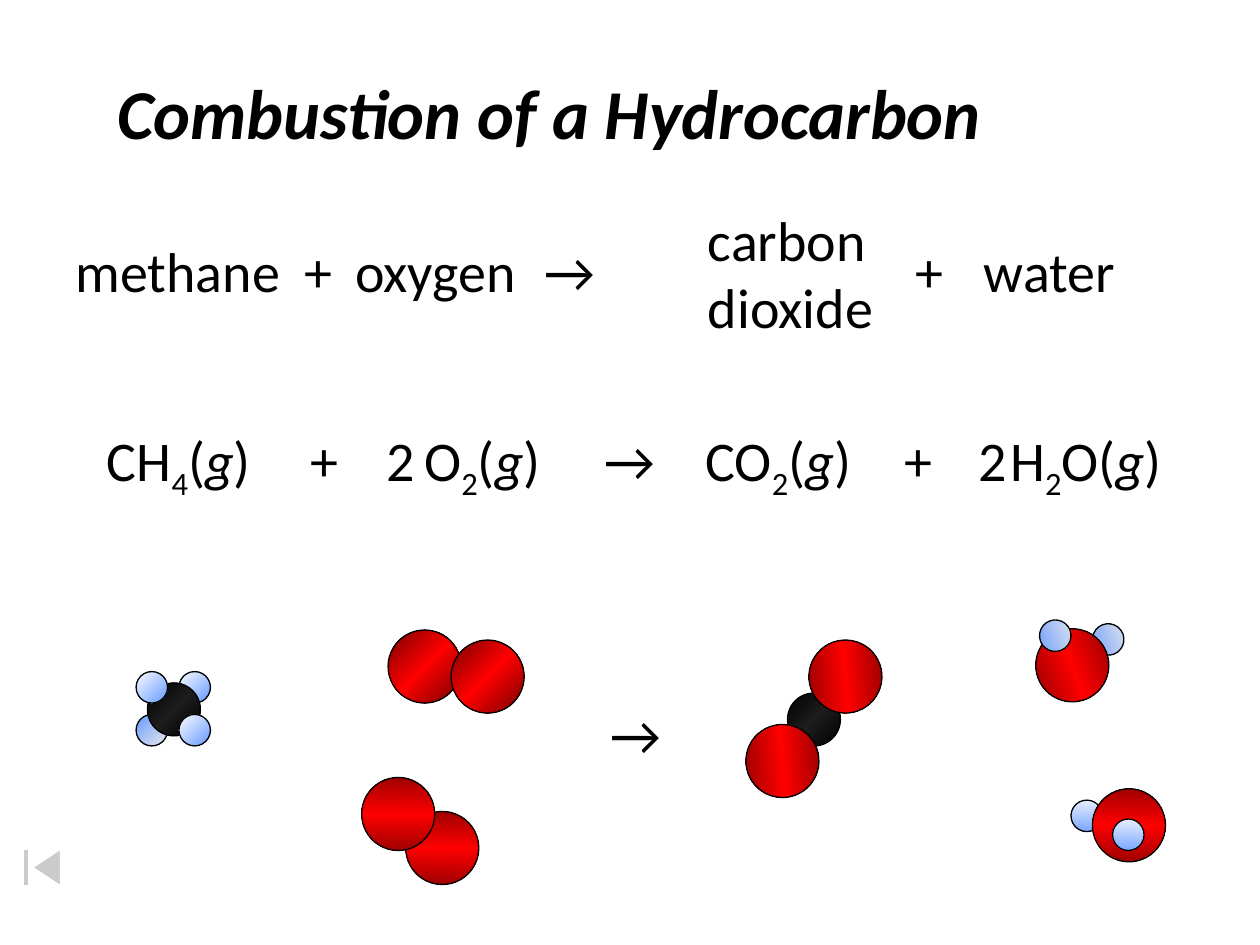
import lxml.etree
import pptx
import pptx.dml.color
import pptx.enum.dml
import pptx.enum.shapes
import pptx.enum.text
import pptx.oxml
import pptx.oxml.ns
import pptx.util

RGBColor = pptx.dml.color.RGBColor
MSO_SHAPE = pptx.enum.shapes.MSO_SHAPE
qn = pptx.oxml.ns.qn

PX = 9144  # 100 px to the inch
FONT = "Calibri"
BLACK = RGBColor(0x00, 0x00, 0x00)
CHARCOAL = RGBColor(0x1C, 0x1C, 0x1C)
RED = RGBColor(0xFF, 0x00, 0x00)
DARK_RED = RGBColor(0x76, 0x00, 0x00)
BLUE = RGBColor(0x66, 0x99, 0xFF)
PALE_GRAY = RGBColor(0xEA, 0xEA, 0xEA)
WHITE = RGBColor(0xFF, 0xFF, 0xFF)

# Atom kinds: diameter and gradient colours
OXYGEN = (58, [DARK_RED, RED, DARK_RED])
CARBON = (42, [BLACK, CHARCOAL, BLACK])
HYDROGEN = (25, [WHITE, BLUE])
HYDROGEN_GRAY = (25, [PALE_GRAY, BLUE])
HYDROGEN_BACK = (25, [BLUE, PALE_GRAY])

presentation = pptx.Presentation()
presentation.slide_width = 1000 * PX
presentation.slide_height = 750 * PX
slide = presentation.slides.add_slide(presentation.slide_layouts[5])


def add_text(left, top, width, height, pieces, wrap=False):
    """Add a text box; later digits become subscripts, the state g is italic."""
    box = slide.shapes.add_textbox(left * PX, top * PX, width * PX, height * PX)
    box.text_frame.word_wrap = wrap
    paragraph = box.text_frame.paragraphs[0]
    for index, piece in enumerate(pieces):
        run = paragraph.add_run()
        run.text = piece
        run.font.name = FONT
        run.font.size = pptx.util.Pt(32)
        run.font.color.rgb = BLACK
        if piece == "g":
            run.font.italic = True
        elif index and piece.isdigit():
            run._r.get_or_add_rPr().set("baseline", "-25000")
    return box


def add_atom(molecule, kind, left, top, rotation):
    """Add one shaded ball to a molecule group."""
    diameter, colors = kind
    atom = molecule.shapes.add_shape(
        MSO_SHAPE.OVAL, left * PX, top * PX, diameter * PX, diameter * PX)
    atom.shadow.inherit = False
    atom.rotation = rotation
    atom.line.color.rgb = BLACK
    atom.line.width = pptx.util.Pt(0.75)
    atom.fill.gradient()
    atom.fill.gradient_angle = 315
    stops = atom._element.spPr.find(".//" + qn("a:gsLst"))
    for stop in list(stops):
        stops.remove(stop)
    for index, color in enumerate(colors):
        position = 100000 * index // (len(colors) - 1)
        stop = lxml.etree.SubElement(stops, qn("a:gs"), pos=str(position))
        lxml.etree.SubElement(stop, qn("a:srgbClr"), val=str(color))


# Title
title = slide.shapes.title
title.left, title.top, title.width, title.height = 83 * PX, 50 * PX, 819 * PX, 77 * PX
title.text_frame.text = "Combustion of a Hydrocarbon"
title.text_frame.word_wrap = False
title.text_frame.auto_size = pptx.enum.text.MSO_AUTO_SIZE.NONE
paragraph = title.text_frame.paragraphs[0]
paragraph.alignment = pptx.enum.text.PP_ALIGN.LEFT
font = paragraph.runs[0].font
font.name = FONT
font.size = pptx.util.Pt(40)
font.bold = font.italic = True
font.color.rgb = BLACK

# Word equation, spaced by tab stops on the reactant side
reactants = add_text(50, 183, 492, 63, ["methane\t+\toxygen\t→"], wrap=True)
properties = reactants.text_frame.paragraphs[0]._p.get_or_add_pPr()
tab_list = lxml.etree.SubElement(properties, qn("a:tabLst"))
for position in (182, 222, 372):
    lxml.etree.SubElement(tab_list, qn("a:tab"), pos=str(position * PX), algn="l")

dioxide = add_text(552, 158, 173, 117, ["carbon"], wrap=True)
second_line = dioxide.text_frame.add_paragraph()
second_line.text = "dioxide"
second_line.runs[0].font.name = FONT
second_line.runs[0].font.size = pptx.util.Pt(32)
second_line.runs[0].font.color.rgb = BLACK
add_text(717, 183, 46, 63, ["+"])
add_text(771, 183, 129, 63, ["water"])

# Formula equation
FORMULA_TERMS = [
    (75, 155, ["CH", "4", "(", "g", ")"]),
    (237, 46, ["+"]),
    (297, 45, ["2"]),
    (327, 127, ["O", "2", "(", "g", ")"]),
    (470, 64, ["→"]),
    (550, 157, ["CO", "2", "(", "g", ")"]),
    (708, 46, ["+"]),
    (767, 45, ["2"]),
    (792, 164, ["H", "2", "O(", "g", ")"]),
]
for left, width, pieces in FORMULA_TERMS:
    add_text(left, 333, width, 63, pieces)

# Arrow between the molecule models
add_text(475, 550, 64, 63, ["→"])

# Molecule models: rotation, then atoms from back to front
MOLECULES = [
    # methane
    (0, [(HYDROGEN_BACK, 108, 567), (HYDROGEN, 142, 533), (CARBON, 117, 542),
         (HYDROGEN, 142, 567), (HYDROGEN, 108, 533)]),
    # two oxygen molecules
    (0, [(OXYGEN, 308, 500), (OXYGEN, 358, 508)]),
    (45.6, [(OXYGEN, 322, 644), (OXYGEN, 287, 617)]),
    # carbon dioxide
    (310.3, [(CARBON, 625, 550), (OXYGEN, 642, 508), (OXYGEN, 592, 575)]),
    # two water molecules
    (113.9, [(HYDROGEN_GRAY, 867, 495), (OXYGEN, 822, 499), (HYDROGEN_GRAY, 825, 492)]),
    (46.5, [(HYDROGEN, 850, 635), (OXYGEN, 867, 626), (HYDROGEN, 883, 650)]),
]
for rotation, atoms in MOLECULES:
    molecule = slide.shapes.add_group_shape()
    for kind, left, top in atoms:
        add_atom(molecule, kind, left, top, 0 if kind is CARBON else rotation)

# Button back to the start
button = slide.shapes.add_shape(
    MSO_SHAPE.ACTION_BUTTON_BEGINNING, 0, 669 * PX, 67 * PX, 39 * PX)
button.shadow.inherit = False
button.fill.solid()
button.fill.fore_color.rgb = WHITE
button.line.color.rgb = WHITE
button.line.width = pptx.util.Pt(0.75)
fill_color = button._element.spPr.find(qn("a:solidFill")).find(qn("a:srgbClr"))
lxml.etree.SubElement(fill_color, qn("a:alpha"), val="50000")

presentation.save("out.pptx")
